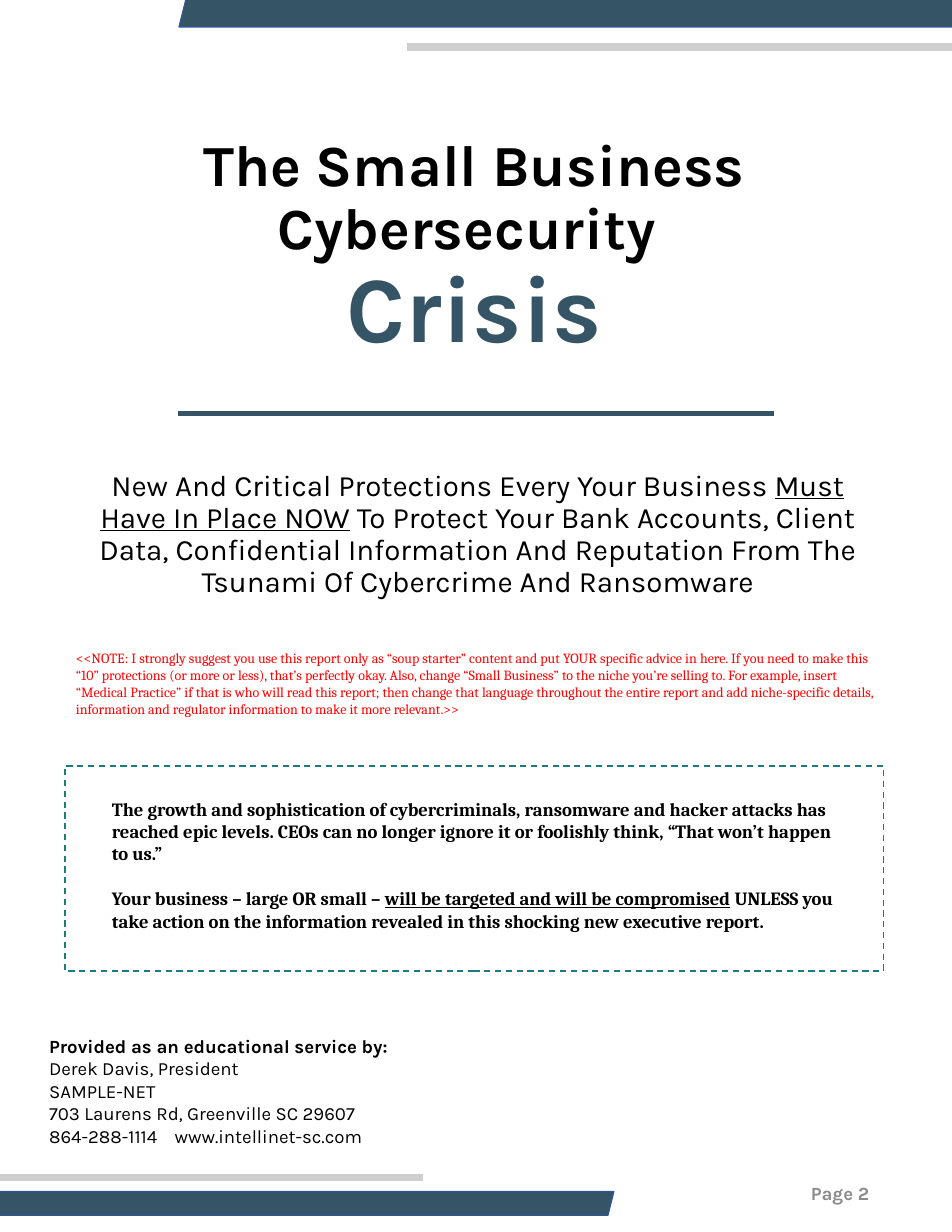
from lxml.etree import SubElement
from pptx import Presentation
from pptx.dml.color import RGBColor
from pptx.enum.dml import MSO_LINE_DASH_STYLE as Dash
from pptx.enum.shapes import MSO_CONNECTOR as Connector, MSO_SHAPE as Shape
from pptx.enum.text import MSO_ANCHOR as Anchor, MSO_AUTO_SIZE as AutoSize, PP_ALIGN as Align
from pptx.oxml.ns import qn
from pptx.util import Inches, Pt

WIDTH, HEIGHT = 8.5, 11
SLATE, SLATE_EDGE, GREY, TEAL = "355466", "325491", "CECECE", "1A7B81"
HEAD_FONT, BODY_FONT = "Karla", "Cambria"


def colour(code):
    return RGBColor.from_string(code)


def place(item, left, top, width, height):
    item.left, item.top = Inches(left), Inches(top)
    item.width, item.height = Inches(width), Inches(height)


def add_tab(para, position):
    tabs = SubElement(para._p.get_or_add_pPr(), qn("a:tabLst"))
    SubElement(tabs, qn("a:tab"), pos=str(Inches(position)), algn="l")


def write(box, paragraphs, size, font=HEAD_FONT, ink="000000", bold=False,
          align=Align.LEFT, anchor=Anchor.TOP, spacing=1.0, gap=0, tab=None):
    """Each paragraph is a list of (text, overrides) spans."""
    frame = box.text_frame
    frame.word_wrap, frame.auto_size = True, AutoSize.NONE
    frame.vertical_anchor = anchor
    for index, spans in enumerate(paragraphs):
        para = frame.add_paragraph() if index else frame.paragraphs[0]
        para.alignment, para.line_spacing = align, spacing
        para.space_before = Pt(gap if index else 0)
        if tab:
            add_tab(para, tab)
        for text, changes in spans:
            span = para.add_run()
            span.text = text
            span.font.name = font
            span.font.size = Pt(changes.get("size", size))
            span.font.bold = changes.get("bold", bold)
            span.font.underline = changes.get("underline", False)
            span.font.color.rgb = colour(changes.get("ink", ink))


def add_text(page, area, paragraphs, size, **style):
    box = page.shapes.add_textbox(*map(Inches, area))
    write(box, paragraphs, size, **style)


def add_shape(page, kind, area, edge, fill=None, dash=None):
    shape = page.shapes.add_shape(kind, *map(Inches, area))
    shape.shadow.inherit = False
    if fill:
        shape.fill.solid()
        shape.fill.fore_color.rgb = colour(fill)
    else:
        shape.fill.background()
    shape.line.color.rgb, shape.line.width = colour(edge), Pt(1)
    if dash:
        shape.line.dash_style = dash


def add_rule(page, start, end, y, ink, weight):
    rule = page.shapes.add_connector(
        Connector.STRAIGHT, Inches(start), Inches(y), Inches(end), Inches(y))
    rule.line.color.rgb, rule.line.width = colour(ink), Pt(weight)
    SubElement(rule._element.spPr, qn("a:effectLst"))


def add_bands(page):
    for left, top, height in ((1.6, -0.39, 0.63), (-2.42, 10.64, 0.21)):
        add_shape(page, Shape.PARALLELOGRAM, (left, top, 7.9, height), SLATE_EDGE, SLATE)
    for start, y in ((3.63, 0.42), (-1.09, 10.51)):
        add_rule(page, start, start + 4.87, y, GREY, 4.5)


def add_heading(page):
    title = page.shapes.title
    place(title, 0.74, 1.17, 6.99, 2.38)
    write(title, [[("The Small Business Cybersecurity ", {})],
                  [("Crisis", {"size": 60, "ink": SLATE})]],
          37.4, bold=True, align=Align.CENTER, spacing=0.9)
    add_rule(page, 1.59, 6.91, 3.69, SLATE, 3.25)
    add_text(page, (0.77, 4.16, 6.99, 1.71), [[
        ("New And Critical Protections Every Your Business ", {}),
        ("Must Have In Place NOW", {"underline": True}),
        (" To Protect Your Bank Accounts, Client Data, Confidential Information And "
         "Reputation From The Tsunami Of Cybercrime And Ransomware", {})]],
        19, align=Align.CENTER, spacing=0.9)


def add_warning(page):
    add_shape(page, Shape.RECTANGLE, (0.58, 6.84, 7.31, 1.83), TEAL, dash=Dash.DASH)
    add_text(page, (0.9, 7.07, 6.75, 1.31), [
        [("The growth and sophistication of cybercriminals, ransomware and hacker attacks "
          "has reached epic levels. CEOs can no longer ignore it or foolishly think, "
          "“That won’t happen to us.”", {})],
        [("Your business – large OR small – ", {}),
         ("will be targeted and will be compromised", {"underline": True}),
         (" UNLESS you take action on the information revealed in this shocking new "
          "executive report.", {})]],
        12, font=BODY_FONT, bold=True, gap=14.4)


def main():
    deck = Presentation()
    deck.slide_width, deck.slide_height = Inches(WIDTH), Inches(HEIGHT)
    page = deck.slides.add_slide(deck.slide_layouts[5])

    add_bands(page)
    add_heading(page)

    # Note to the report's author
    add_text(page, (0.58, 5.75, 7.31, 0.71), [[
        ("<<NOTE: I strongly suggest you use this report only as “soup starter” content and "
         "put YOUR specific advice in here. If you need to make this “10” protections (or "
         "more or less), that’s perfectly okay. Also, change “Small Business” to the niche "
         "you’re selling to. For example, insert “Medical Practice” if that is who will read "
         "this report; then change that language throughout the entire report and add "
         "niche-specific details, information and regulator information to make it more "
         "relevant.>>", {})]], 9, font=BODY_FONT, ink="FF0000")

    add_warning(page)

    # Sender and page number
    contact = ["Derek Davis, President", "SAMPLE-NET", "703 Laurens Rd, Greenville SC 29607",
               "864-288-1114\twww.intellinet-sc.com"]
    add_text(page, (0.34, 9.19, 7.88, 1.11),
             [[("Provided as an educational service by:", {"bold": True})]]
             + [[(line, {})] for line in contact], 12, tab=1.12)
    add_text(page, (5.95, 10.36, 1.91, 0.59), [[("Page 2", {})]], 12, ink="8C8C8C",
             bold=True, align=Align.RIGHT, anchor=Anchor.MIDDLE)

    deck.save("out.pptx")


if __name__ == "__main__":
    main()
